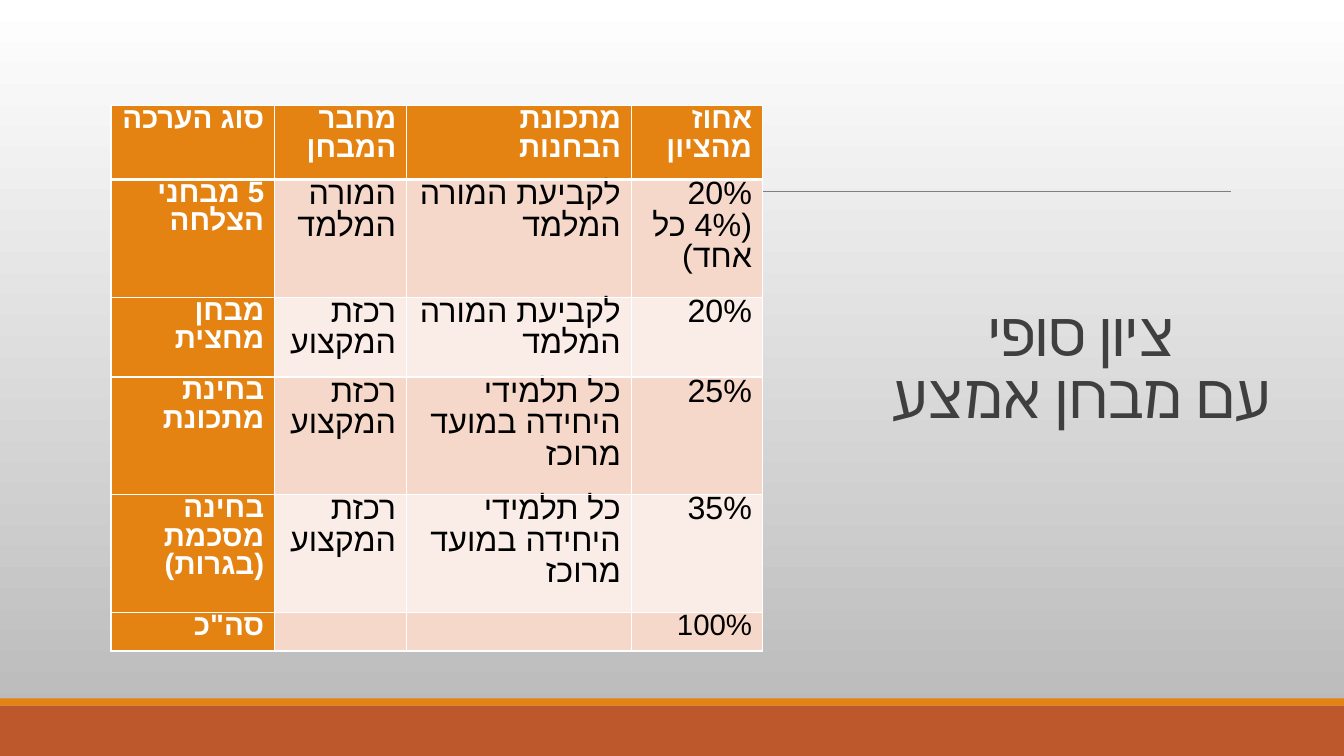
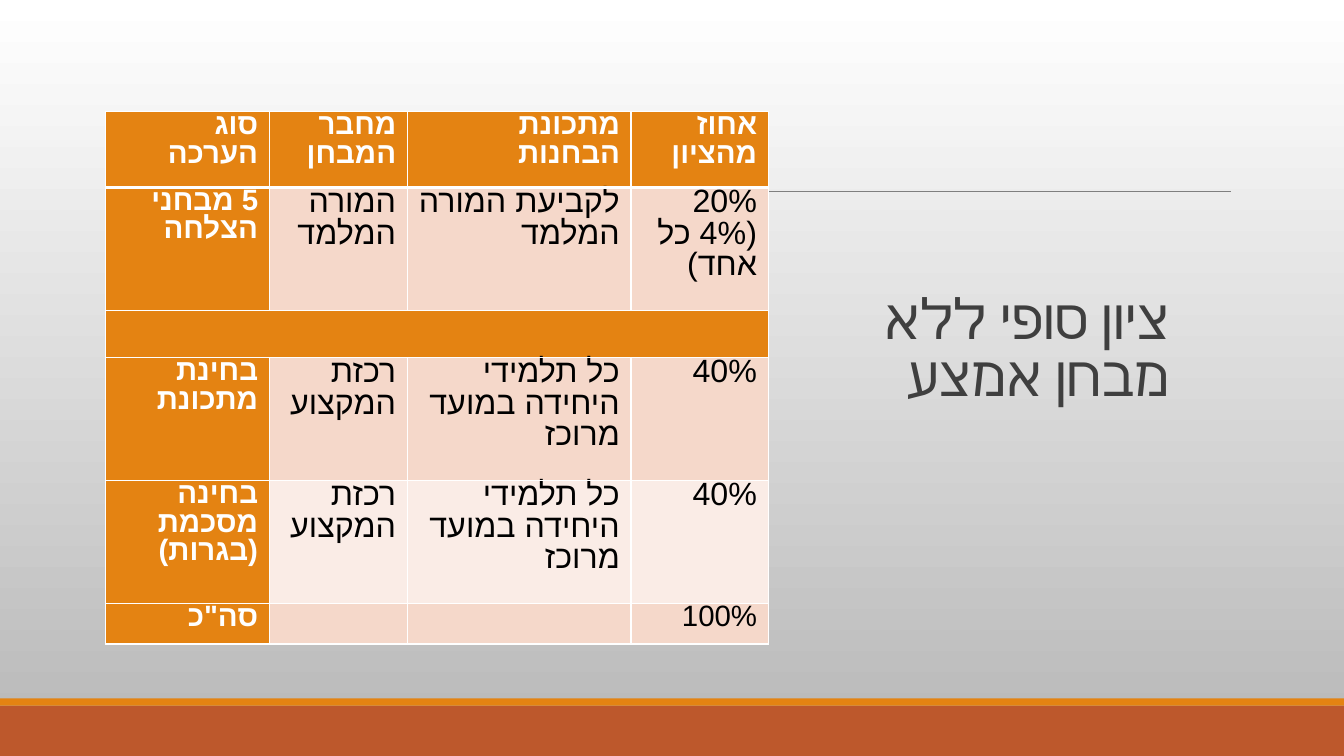
from lxml import etree
from pptx import Presentation
from pptx.dml.color import RGBColor
from pptx.enum.shapes import MSO_CONNECTOR, MSO_SHAPE
from pptx.enum.text import MSO_ANCHOR, PP_ALIGN
from pptx.oxml.ns import qn
from pptx.util import Emu, Pt

RECT = MSO_SHAPE.RECTANGLE
STRAIGHT = MSO_CONNECTOR.STRAIGHT
CENTER, RIGHT = PP_ALIGN.CENTER, PP_ALIGN.RIGHT
MIDDLE, BOTTOM = MSO_ANCHOR.MIDDLE, MSO_ANCHOR.BOTTOM

PX = 9144  # 100 px to the inch
SLIDE_W, SLIDE_H = 1333, 750
ORANGE, RUST, RULE_GREY, TITLE_GREY = "E48312", "BD582C", "7F7F7F", "3F3F3F"
WHITE, BLACK, PAGE_END = "FFFFFF", "000000", "B7B7B7"
BAND_DARK, BAND_LIGHT = "F5D8CA", "FAECE6"
TITLE_FONT, TABLE_FONT = "Calibri", "Arial"
LABEL_SIZE, BODY_SIZE = 21, 23

HEADER = ("סוג הערכה", "מחבר המבחן", "מתכונת הבחנות", "אחוז מהציון")
QUIZZES = ("5 מבחני הצלחה", "המורה המלמד", "לקביעת המורה המלמד", "20% (4% כל אחד)")
TOTAL = ('סה"כ', "", "", "100%")
DIVIDER = ()  # one cell across the whole table
COORDINATOR = "רכזת המקצוע"
ALL_PUPILS = "כל תלמידי היחידה במועד מרוכז"


def exam_rows(mock_share, final_share):
    return [("בחינת מתכונת", COORDINATOR, ALL_PUPILS, mock_share),
            ("בחינה מסכמת (בגרות)", COORDINATOR, ALL_PUPILS, final_share)]


def px(n):
    return Emu(n * PX)


def rgb(value):
    return RGBColor.from_string(value)


def style_paragraph(p, font, size, color, align, spacing, bold=False):
    """Format a right-to-left paragraph, Hebrew font included."""
    p.alignment, p.line_spacing = align, spacing
    p.font.name, p.font.size, p.font.bold = font, Pt(size), bold
    p.font.color.rgb = rgb(color)
    p._p.get_or_add_pPr().set("rtl", "1")
    for r in p.runs:
        r.font.name, r.font.size, r.font.bold = font, Pt(size), bold
        r.font.color.rgb = rgb(color)
        etree.SubElement(r._r.get_or_add_rPr(), qn("a:cs"), typeface=font)


def add_band(slide, top, height, color):
    sp = slide.shapes.add_shape(RECT, 0, px(top), px(SLIDE_W), px(height))
    sp.shadow.inherit = False
    sp.fill.solid()
    sp.fill.fore_color.rgb = rgb(color)
    sp.line.fill.background()


def add_page(prs):
    """Add a slide with the shared background, footer bands and rule."""
    slide = prs.slides.add_slide(prs.slide_layouts[6])
    fill = slide.background.fill
    fill.gradient()
    fill.gradient_angle = 270
    for stop, color, position in zip(fill.gradient_stops, (WHITE, PAGE_END), (0, 1)):
        stop.color.rgb = rgb(color)
        stop.position = position
    add_band(slide, 700, 50, RUST)
    add_band(slide, 693, 7, ORANGE)
    rule = slide.shapes.add_connector(STRAIGHT, px(131), px(190), px(1221), px(190))
    rule.line.color.rgb = rgb(RULE_GREY)
    rule.line.width = Pt(0.75)
    etree.SubElement(rule._element.spPr, qn("a:effectLst"))
    return slide


def add_title(slide, box, text, size, align, anchor):
    tf = slide.shapes.add_textbox(*map(px, box)).text_frame
    tf.word_wrap = True
    tf.vertical_anchor = anchor
    p = tf.paragraphs[0]
    p.text = text
    style_paragraph(p, TITLE_FONT, size, TITLE_GREY, align, 0.85)


def set_borders(cell, top, bottom):
    """Draw white cell borders; top and bottom widths are in points."""
    tc_pr = cell._tc.get_or_add_tcPr()
    for side, width in (("L", 1), ("R", 1), ("T", top), ("B", bottom)):
        ln = etree.SubElement(tc_pr, qn("a:ln" + side), w=str(Pt(width)))
        fill = etree.SubElement(ln, qn("a:solidFill"))
        etree.SubElement(fill, qn("a:srgbClr"), val=WHITE)


def fill_cell(cell, text, row, is_label, is_total, inset):
    set_borders(cell, 3 if row == 1 else 1, 3 if row == 0 else 1)
    cell.margin_left = cell.margin_right = px(inset)
    cell.margin_top = cell.margin_bottom = 0
    cell.fill.solid()
    band = BAND_DARK if row % 2 else BAND_LIGHT
    cell.fill.fore_color.rgb = rgb(ORANGE if is_label else band)
    p = cell.text_frame.paragraphs[0]
    p.text = text
    size = LABEL_SIZE if is_label or is_total else BODY_SIZE
    style_paragraph(p, TABLE_FONT, size, WHITE if is_label else BLACK,
                    RIGHT, 0.87, is_label)


def add_grades(slide, left, top, widths, heights, rows, inset):
    table = slide.shapes.add_table(len(rows), len(widths), px(left), px(top),
                                   px(sum(widths)), px(sum(heights))).table
    table.horz_banding = False
    for column, width in zip(table.columns, widths):
        column.width = px(width)
    for i, (values, height) in enumerate(zip(rows, heights)):
        table.rows[i].height = px(height)
        for j, text in enumerate(values or [""] * len(widths)):
            is_label = i == 0 or j == 0 or values == DIVIDER
            fill_cell(table.cell(i, j), text, i, is_label, values == TOTAL, inset)
        if values == DIVIDER:
            table.cell(i, 0).merge(table.cell(i, len(widths) - 1))


def with_midterm(prs):
    slide = add_page(prs)
    add_title(slide, (832, 194, 481, 239), "ציון סופי\vעם מבחן אמצע", 44, CENTER, BOTTOM)
    midterm = ("מבחן מחצית", COORDINATOR, "לקביעת המורה המלמד", "20%")
    add_grades(slide, 110, 105, (162, 131, 223, 130), (73, 117, 79, 117, 117, 38),
               [HEADER, QUIZZES, midterm, *exam_rows("25%", "35%"), TOTAL], 10)


def without_midterm(prs):
    slide = add_page(prs)
    add_title(slide, (827, 219, 343, 258), "ציון סופי ללא מבחן אמצע", 40, RIGHT, MIDDLE)
    add_grades(slide, 105, 111, (162, 137, 222, 136), (75, 122, 47, 122, 122, 40),
               [HEADER, QUIZZES, DIVIDER, *exam_rows("40%", "40%"), TOTAL], 11)


def main():
    prs = Presentation()
    prs.slide_width, prs.slide_height = px(SLIDE_W), px(SLIDE_H)
    with_midterm(prs)
    without_midterm(prs)
    prs.save("out.pptx")


if __name__ == "__main__":
    main()
